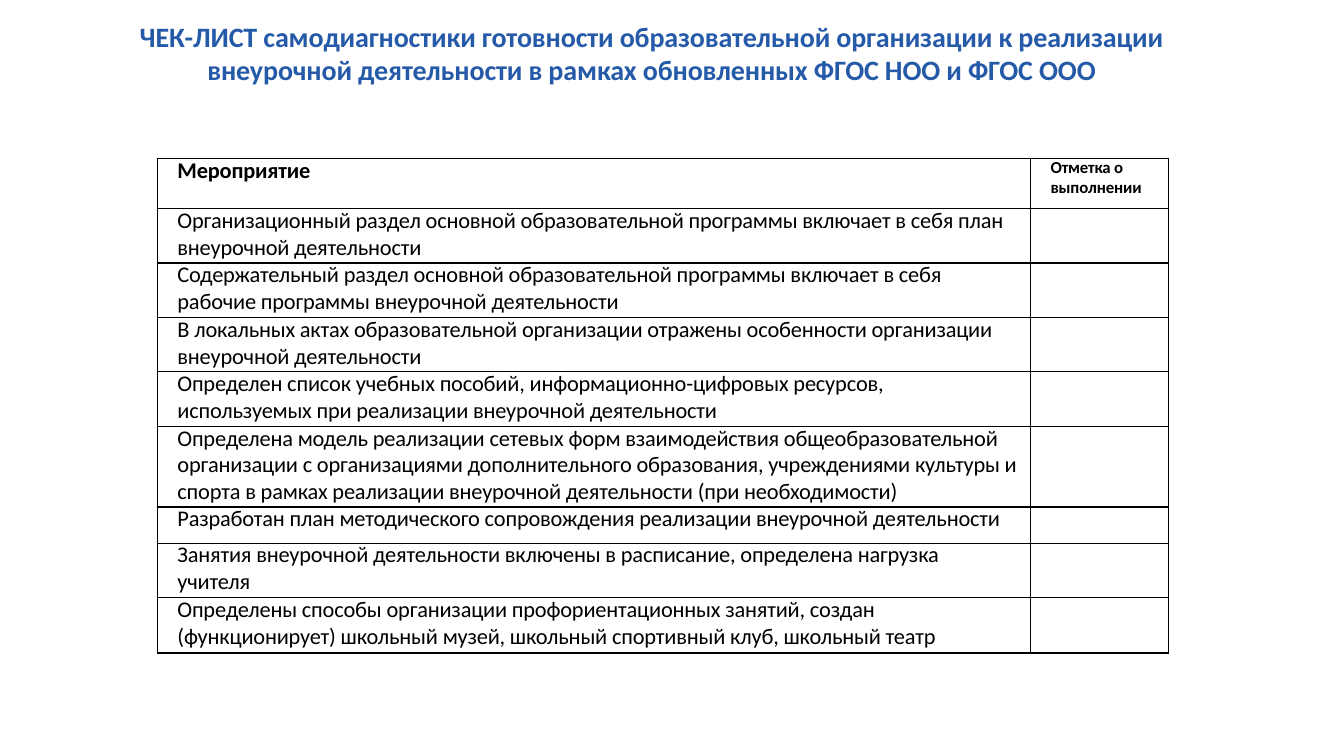
import pptx
import pptx.util
import pptx.dml.color
import pptx.enum.text
import pptx.oxml.ns
import lxml.etree

Inches = pptx.util.Inches
Pt = pptx.util.Pt

COLORS = {"title": "255AA9", "text": "000000", "border": "000000"}

TITLE_LINES = [
    "ЧЕК-ЛИСТ самодиагностики готовности образовательной организации к реализации",
    "внеурочной деятельности в рамках обновленных ФГОС НОО и ФГОС ООО",
]
HEADERS = [["Мероприятие"], ["Отметка о", "выполнении"]]
ACTIVITIES = [
    ["Организационный раздел основной образовательной программы включает в себя план",
     "внеурочной деятельности"],
    ["Содержательный раздел основной образовательной программы включает в себя",
     "рабочие программы внеурочной деятельности"],
    ["В локальных актах образовательной организации отражены особенности организации",
     "внеурочной деятельности"],
    ["Определен список учебных пособий, информационно-цифровых ресурсов,",
     "используемых при реализации внеурочной деятельности"],
    ["Определена модель реализации сетевых форм взаимодействия общеобразовательной",
     "организации с организациями дополнительного образования, учреждениями культуры "
     "и спорта в рамках реализации внеурочной деятельности (при необходимости)"],
    ["Разработан план методического сопровождения реализации внеурочной деятельности"],
    ["Занятия внеурочной деятельности включены в расписание, определена нагрузка",
     "учителя"],
    ["Определены способы организации профориентационных занятий, создан",
     "(функционирует) школьный музей, школьный спортивный клуб, школьный театр"],
]
COLUMN_WIDTHS = [8.66, 1.37]
ROW_HEIGHTS = [0.5, 0.54, 0.54, 0.54, 0.54, 0.8, 0.36, 0.54, 0.55]


class ChecklistSlide:
    font_name = "Calibri"
    letter_spacing = -0.1

    def __init__(self, presentation):
        self.slide = presentation.slides.add_slide(presentation.slide_layouts[5])

    def set_lines(self, text_frame, lines, size, color, bold=False):
        """Put one paragraph per line and format its run."""
        text_frame.text = "\n".join(lines)
        text_frame.word_wrap = True
        for paragraph in text_frame.paragraphs:
            for run in paragraph.runs:
                run.font.name = self.font_name
                run.font.size = Pt(size)
                run.font.bold = bold
                run.font.color.rgb = pptx.dml.color.RGBColor.from_string(COLORS[color])
                run._r.get_or_add_rPr().set("spc", str(round(self.letter_spacing * 100)))

    def title(self, lines, left, top, width, height):
        shape = self.slide.shapes.title
        shape.left, shape.top = Inches(left), Inches(top)
        shape.width, shape.height = Inches(width), Inches(height)
        frame = shape.text_frame
        self.set_lines(frame, lines, 20, "title", bold=True)
        frame.auto_size = pptx.enum.text.MSO_AUTO_SIZE.NONE
        frame.vertical_anchor = pptx.enum.text.MSO_ANCHOR.TOP
        frame.margin_left = frame.margin_right = frame.margin_bottom = 0
        frame.margin_top = Inches(0.01)
        for paragraph in frame.paragraphs:
            paragraph.alignment = pptx.enum.text.PP_ALIGN.CENTER
            paragraph.line_spacing = 1.0
            paragraph.space_before = Pt(0)
        frame.paragraphs[0].space_before = Pt(1.1)

    def table(self, left, top, widths, heights):
        frame = self.slide.shapes.add_table(
            len(heights), len(widths), Inches(left), Inches(top),
            Inches(sum(widths)), Inches(sum(heights)))
        table = frame.table
        table.first_row = table.horz_banding = False
        for column, width in zip(table.columns, widths):
            column.width = Inches(width)
        for row, height in zip(table.rows, heights):
            row.height = Inches(height)
        for cell in table.iter_cells():
            cell.margin_left = cell.margin_right = 0
            cell.margin_top = cell.margin_bottom = 0
            self.borders(cell)
            cell.fill.background()
        return table

    def borders(self, cell, width=1):
        properties = cell._tc.get_or_add_tcPr()
        qualified = pptx.oxml.ns.qn
        for side in ("a:lnL", "a:lnR", "a:lnT", "a:lnB"):
            line = lxml.etree.SubElement(properties, qualified(side), w=str(int(Pt(width))))
            fill = lxml.etree.SubElement(line, qualified("a:solidFill"))
            lxml.etree.SubElement(fill, qualified("a:srgbClr"), val=COLORS["border"])

    def cell_text(self, cell, lines, size, spacings, bold=False):
        """Set indented lines; a spacing is in points, or a multiple if a float."""
        self.set_lines(cell.text_frame, lines, size, "text", bold)
        for paragraph, spacing in zip(cell.text_frame.paragraphs, spacings):
            paragraph.line_spacing = spacing
            properties = paragraph._p.get_or_add_pPr()
            properties.set("marL", str(int(Inches(0.2))))
            properties.set("indent", "0")


def main():
    presentation = pptx.Presentation()
    presentation.slide_width = Inches(13.33)
    presentation.slide_height = Inches(7.5)
    checklist = ChecklistSlide(presentation)

    # Heading
    checklist.title(TITLE_LINES, 1.33, 0.18, 10.26, 0.7)

    # Checklist grid with its header row
    table = checklist.table(1.56, 1.57, COLUMN_WIDTHS, ROW_HEIGHTS)
    checklist.cell_text(table.cell(0, 0), HEADERS[0], 16, [Pt(18.5)], bold=True)
    checklist.cell_text(table.cell(0, 1), HEADERS[1], 12, [Pt(13.8), 1.0], bold=True)

    # Activities, with the mark column left empty
    for row, lines in enumerate(ACTIVITIES, start=1):
        checklist.cell_text(table.cell(row, 0), lines, 16, [Pt(18.4), Pt(19.2)])

    presentation.save("out.pptx")


if __name__ == "__main__":
    main()
